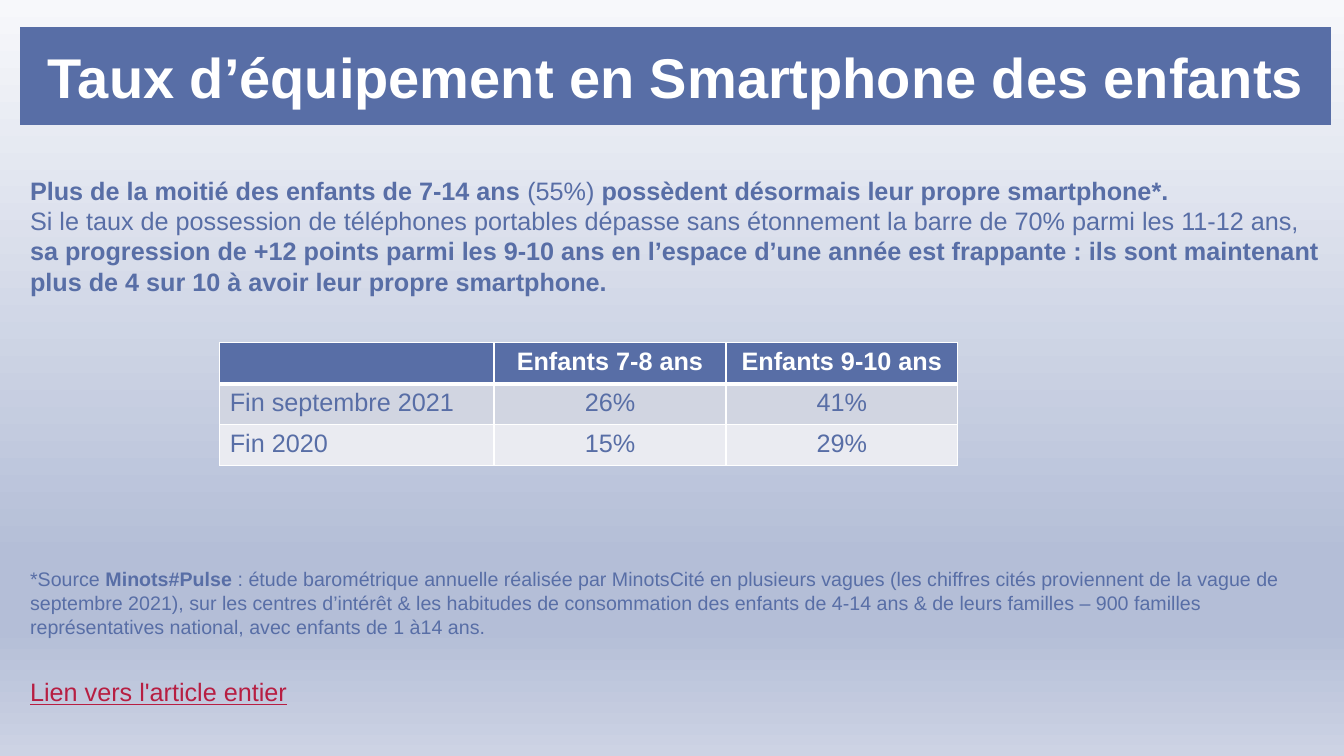
from dataclasses import dataclass

from lxml.etree import SubElement
from pptx import Presentation
from pptx.dml.color import RGBColor
from pptx.enum.shapes import MSO_SHAPE
from pptx.enum.text import MSO_ANCHOR, PP_ALIGN
from pptx.oxml.ns import qn
from pptx.util import Inches, Pt


@dataclass(frozen=True)
class Theme:
    font: str = "Arial"
    blue: str = "586EA6"
    white: str = "FFFFFF"
    link: str = "B71E42"
    bands: tuple = ("D1D5E1", "EAEBF1")
    backdrop: tuple = ((0, "F7F8FB"), (74, "B4BED7"), (83, "B4BED7"), (100, "CDD3E4"))
    title_size: int = 40
    body_size: int = 18
    source_size: int = 14


THEME = Theme()

INTRO = [
    [("Plus de la moitié des enfants de 7-14 ans ", True), ("(55%)", False),
     (" possèdent désormais leur propre smartphone*.", True)],
    [("Si le taux de possession de téléphones portables dépasse sans étonnement "
      "la barre de 70% parmi les 11-12 ans, ", False),
     ("sa progression de +12 points parmi les 9-10 ans en l’espace d’une année est "
      "frappante : ils sont maintenant plus de 4 sur 10 à avoir leur propre smartphone.", True)],
]
SOURCE = [
    [("*Source ", False), ("Minots#Pulse", True),
     (" : étude barométrique annuelle réalisée par MinotsCité en plusieurs vagues "
      "(les chiffres cités proviennent de la vague de septembre 2021), sur les centres "
      "d’intérêt & les habitudes de consommation des enfants de 4-14 ans & de leurs "
      "familles – 900 familles représentatives national, avec enfants de 1 à14 ans.", False)],
]
RATES = [
    ("", "Enfants 7-8 ans", "Enfants 9-10 ans"),
    ("Fin septembre 2021", "26%", "41%"),
    ("Fin 2020", "15%", "29%"),
]


def add_text(paragraph, text, size=THEME.body_size, color=THEME.blue, bold=False, underline=False):
    run = paragraph.add_run()
    run.text = text
    run.font.name = THEME.font
    run.font.size = Pt(size)
    run.font.color.rgb = RGBColor.from_string(color)
    run.font.bold = bold
    run.font.underline = underline


def add_solid(parent, color):
    SubElement(SubElement(parent, qn("a:solidFill")), qn("a:srgbClr"), val=color)


def paint_backdrop(slide):
    fill = slide.background.fill
    fill.gradient()
    fill.gradient_angle = 270  # counter-clockwise: runs from top to bottom
    stops = fill.gradient_stops
    stop_list = slide.background._cSld.find(".//" + qn("a:gsLst"))
    for stop in list(stop_list):
        stop_list.remove(stop)
    for position, color in THEME.backdrop:
        stop = SubElement(stop_list, qn("a:gs"), pos=str(position * 1000))
        SubElement(stop, qn("a:srgbClr"), val=color)


def add_title(slide, left, top, width, height):
    banner = slide.shapes.add_shape(
        MSO_SHAPE.RECTANGLE, Inches(left), Inches(top), Inches(width), Inches(height))
    banner.shadow.inherit = False
    banner.fill.solid()
    banner.fill.fore_color.rgb = RGBColor.from_string(THEME.blue)
    banner.line.fill.background()
    frame = banner.text_frame
    frame.word_wrap = True
    frame.vertical_anchor = MSO_ANCHOR.MIDDLE
    title = frame.paragraphs[0]
    title.alignment = PP_ALIGN.CENTER
    add_text(title, "Taux d’équipement en Smartphone des enfants",
             size=THEME.title_size, color=THEME.white, bold=True)


def add_passage(slide, left, top, width, height, passage, **formatting):
    """Place paragraphs given as lists of (text, bold) pairs."""
    box = slide.shapes.add_textbox(Inches(left), Inches(top), Inches(width), Inches(height))
    frame = box.text_frame
    frame.word_wrap = True
    for index, parts in enumerate(passage):
        paragraph = frame.add_paragraph() if index else frame.paragraphs[0]
        for text, bold in parts:
            add_text(paragraph, text, bold=bold, **formatting)


def add_borders(cell, **widths):
    properties = cell._tc.get_or_add_tcPr()
    for side in "LRTB":
        border = SubElement(properties, qn("a:ln" + side), w=str(Pt(widths.get(side, 1))))
        add_solid(border, THEME.white)


def add_rates(slide, left, top, width, height):
    label_width = 2.72
    age_width = (width - label_width) / 2
    rates = slide.shapes.add_table(
        len(RATES), 3, Inches(left), Inches(top), Inches(width), Inches(height)).table
    for column, column_width in zip(rates.columns, (label_width, age_width, age_width)):
        column.width = Inches(column_width)
    for row, values in enumerate(RATES):
        is_header = row == 0
        for column, value in enumerate(values):
            cell = rates.cell(row, column)
            # The rule between header and body is thicker
            add_borders(cell, B=3 if is_header else 1, T=3 if row == 1 else 1)
            cell.fill.solid()
            cell.fill.fore_color.rgb = RGBColor.from_string(
                THEME.blue if is_header else THEME.bands[row - 1])
            if value:
                paragraph = cell.text_frame.paragraphs[0]
                paragraph.alignment = PP_ALIGN.CENTER if column else PP_ALIGN.LEFT
                add_text(paragraph, value, bold=is_header,
                         color=THEME.white if is_header else THEME.blue)


def main():
    deck = Presentation()
    deck.slide_width, deck.slide_height = Inches(13.33), Inches(7.5)
    slide = deck.slides.add_slide(deck.slide_layouts[6])
    left, width = 0.2, 13

    paint_backdrop(slide)
    add_title(slide, left, 0.27, width, 0.97)
    add_passage(slide, left, 1.69, width, 1.3, INTRO)
    add_rates(slide, 2.18, 3.4, 7.32, 1.22)
    add_passage(slide, left, 5.58, width, 0.8, SOURCE, size=THEME.source_size)
    add_passage(slide, left, 6.66, 4.53, 0.4, [[("Lien vers l'article entier", False)]],
                color=THEME.link, underline=True)
    deck.save("out.pptx")


if __name__ == "__main__":
    main()
